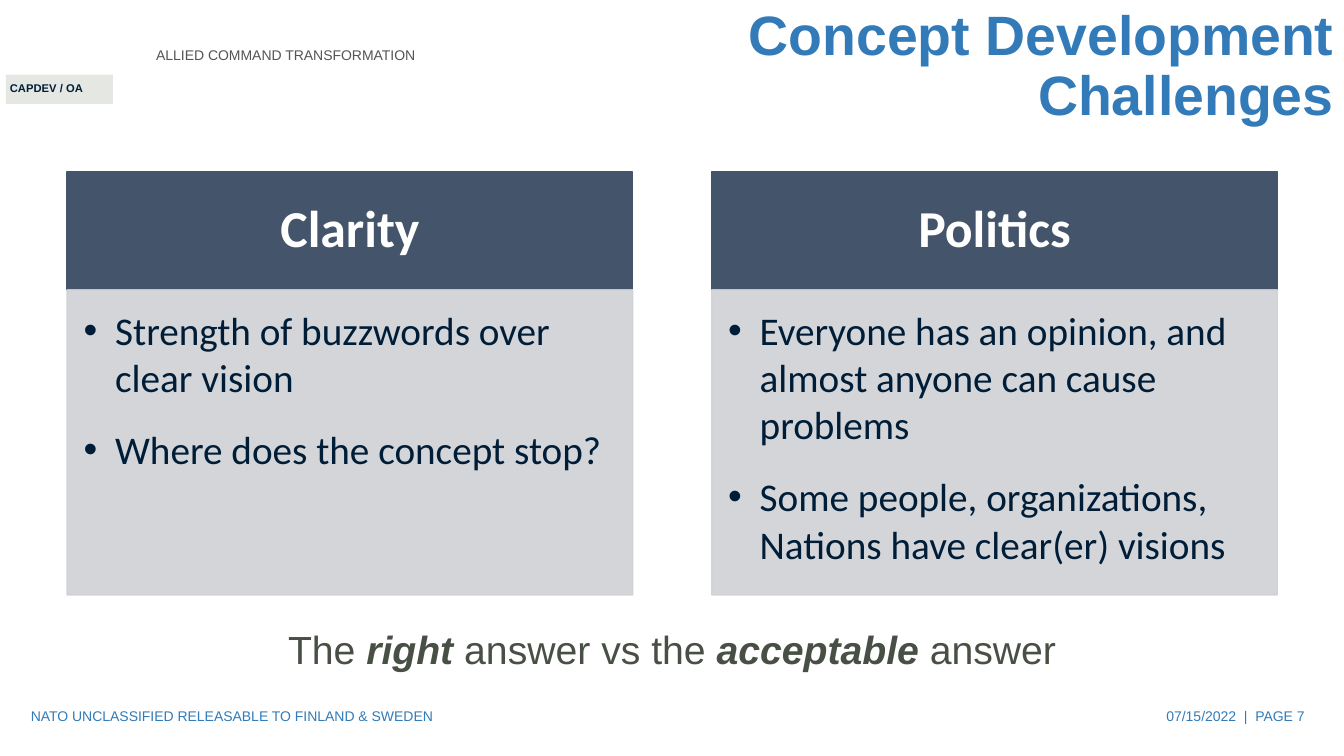
from lxml import etree
from pptx import Presentation
from pptx.dml.color import RGBColor
from pptx.enum.shapes import MSO_SHAPE
from pptx.enum.text import MSO_ANCHOR, MSO_AUTO_SIZE, PP_ALIGN
from pptx.oxml.ns import qn
from pptx.util import Pt

LEFT, CENTER, RIGHT = PP_ALIGN.LEFT, PP_ALIGN.CENTER, PP_ALIGN.RIGHT
TOP, MIDDLE = MSO_ANCHOR.TOP, MSO_ANCHOR.MIDDLE
RECTANGLE = MSO_SHAPE.RECTANGLE

WHITE = RGBColor(0xFF, 0xFF, 0xFF)
GRAY = RGBColor(0x54, 0x54, 0x54)
TAG_FILL = RGBColor(0xE5, 0xE7, 0xE3)
NAVY = RGBColor(0x00, 0x1D, 0x38)
BLUE = RGBColor(0x32, 0x7B, 0xB8)
OLIVE = RGBColor(0x48, 0x50, 0x45)
SLATE = RGBColor(0x44, 0x54, 0x6A)
PANEL = RGBColor(0xCF, 0xD1, 0xD4)


def add_rectangle(page, left, top, width, height, color):
    box = page.shapes.add_shape(RECTANGLE, Pt(left), Pt(top), Pt(width), Pt(height))
    box.shadow.inherit = False
    box.fill.solid()
    box.fill.fore_color.rgb = color
    box.line.color.rgb = color
    box.line.width = Pt(1)
    return box


def format_text(box, size, color, bold=False, align=LEFT, anchor=MIDDLE, font="Arial"):
    frame = box.text_frame
    frame.word_wrap = True
    frame.auto_size = MSO_AUTO_SIZE.NONE
    frame.vertical_anchor = anchor
    for para in frame.paragraphs:
        para.alignment = align
        for span in para.runs:
            span.font.name = font
            span.font.size = Pt(size)
            span.font.bold = bold
            span.font.color.rgb = color


deck = Presentation()
deck.slide_width, deck.slide_height = Pt(960), Pt(540)
page = deck.slides.add_slide(deck.slide_layouts[5])

# Title
title = page.shapes.title
title.left, title.top, title.width, title.height = Pt(312), Pt(0), Pt(648), Pt(96)
title.text_frame.text = "Concept Development Challenges"
format_text(title, 39.6, BLUE, bold=True, align=RIGHT)
title.text_frame.paragraphs[0].line_spacing = 0.9

# Header tag background
tag = add_rectangle(page, 4.3, 53.3, 76.3, 21, TAG_FILL)
tag.line.fill.background()

# Header and footer labels
labels = [
    ("ALLIED COMMAND TRANSFORMATION", 104.4, 18, 425.5, 42.5, 10, GRAY, False, LEFT),
    ("CAPDEV / OA", 0, 54.7, 80, 17, 8, NAVY, True, LEFT),
    ("NATO UNCLASSIFIED RELEASABLE TO FINLAND & SWEDEN",
     15, 497, 324, 28.8, 10, BLUE, False, LEFT),
    ("07/15/2022  |  PAGE 7", 723, 497, 216, 28.8, 10, BLUE, False, RIGHT),
]
for text, left, top, width, height, size, color, bold, align in labels:
    label = page.shapes.add_textbox(Pt(left), Pt(top), Pt(width), Pt(height))
    label.text_frame.text = text
    format_text(label, size, color, bold, align)

# Two columns: heading above a bulleted panel
columns = [
    ("Clarity", ["Strength of buzzwords over clear vision",
                 "Where does the concept stop?"]),
    ("Politics", ["Everyone has an opinion, and almost anyone can cause problems",
                  "Some people, organizations, Nations have clear(er) visions"]),
]
for index, (name, points) in enumerate(columns):
    left = 48 + index * 460.4
    heading = add_rectangle(page, left, 123, 404, 84, SLATE)
    heading.text_frame.text = name
    format_text(heading, 37, WHITE, bold=True, align=CENTER, font="Calibri")
    heading.text_frame.paragraphs[0].line_spacing = 0.9

    panel = add_rectangle(page, left, 207, 404, 218, PANEL)
    for color_element in panel.element.spPr.iter(qn("a:srgbClr")):
        etree.SubElement(color_element, qn("a:alpha"), val="90000")
    frame = panel.text_frame
    frame.margin_left = frame.margin_top = Pt(11.8)
    frame.margin_right, frame.margin_bottom = Pt(15.7), Pt(17.6)
    frame.text = "\n".join(points)
    for para in frame.paragraphs:
        properties = para._p.get_or_add_pPr()
        properties.set("marL", str(Pt(22.5)))
        properties.set("indent", str(-Pt(22.5)))
        etree.SubElement(properties, qn("a:buFont"), typeface="Arial")
        etree.SubElement(properties, qn("a:buChar"), char="•")
        para.space_after = Pt(18)
    format_text(panel, 28, NAVY, anchor=TOP, font="Calibri")

# Closing line with emphasised words
closing = page.shapes.add_textbox(Pt(0), Pt(426.2), Pt(960), Pt(39))
para = closing.text_frame.paragraphs[0]
for text in ["The ", "right ", "answer vs the ", "acceptable ", "answer"]:
    para.add_run().text = text
format_text(closing, 28, OLIVE, align=CENTER, anchor=TOP)
para.line_spacing = 1.5
for span in para.runs[1::2]:
    span.font.bold = span.font.italic = True

deck.save("out.pptx")
